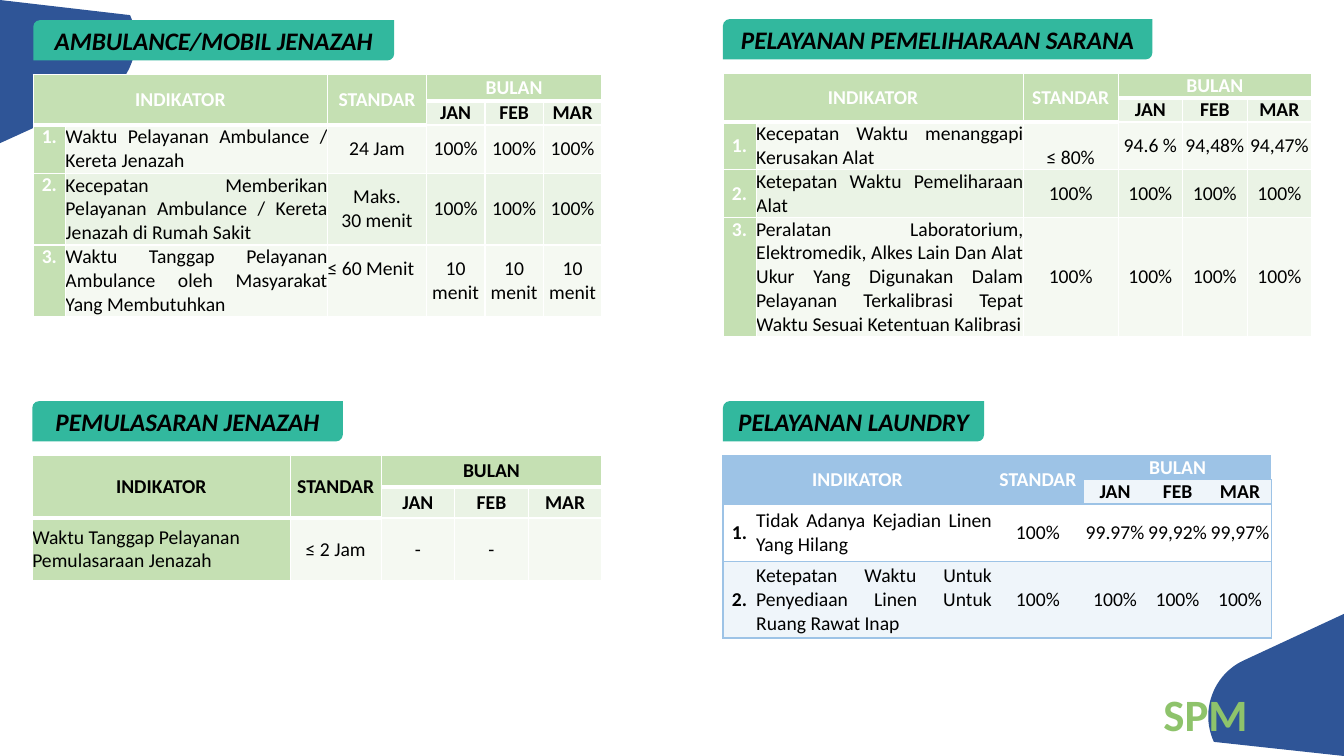
from collections import namedtuple

from lxml import etree
from pptx import Presentation
from pptx.dml.color import RGBColor
from pptx.enum import shapes, text
from pptx.oxml import ns
from pptx.util import Inches, Pt

NAVY = RGBColor(0x2F, 0x55, 0x97)
TEAL = RGBColor(0x32, 0xB8, 0x9E)
LEAF = RGBColor(0x8E, 0xC3, 0x6B)
GREEN = RGBColor(0xC5, 0xE0, 0xB3)
MINT = RGBColor(0xEA, 0xF3, 0xE5)
PALE = RGBColor(0xF5, 0xF9, 0xF2)
BLUE = RGBColor(0x9D, 0xC3, 0xE6)
ICE = RGBColor(0xEF, 0xF5, 0xFA)
WHITE = RGBColor(0xFF, 0xFF, 0xFF)
BLACK = RGBColor(0, 0, 0)

LEFT, MID, JUST = (text.PP_ALIGN.LEFT, text.PP_ALIGN.CENTER,
                   text.PP_ALIGN.JUSTIFY)
TOP, HALF, BASE = (text.MSO_ANCHOR.TOP, text.MSO_ANCHOR.MIDDLE,
                   text.MSO_ANCHOR.BOTTOM)
FONT = "Calibri"
GAP = 0.54  # from the top of a title tag to the top of its table

# head: header fill, ink: header text, band: even and odd rows,
# side: fill of the first column (None follows the row), num: its text
Look = namedtuple("Look", "head ink band side num grid")
FERN = Look(GREEN, WHITE, (PALE, MINT), GREEN, WHITE, True)
MOSS = FERN._replace(ink=BLACK, num=BLACK)
SKY = Look(BLUE, WHITE, (WHITE, ICE), None, BLACK, False)


def style(frame, size, color, bold=False, italic=False, align=MID):
    for para in frame.paragraphs:
        para.alignment = align
        font = para.font
        font.name, font.size, font.color.rgb = FONT, Pt(size), color
        font.bold, font.italic = bold, italic


def edge(cell, side, color, width):
    """Draw one border of a cell; no colour means no line."""
    props = cell._tc.get_or_add_tcPr()
    line = etree.SubElement(props, ns.qn("a:ln" + side), w=str(Pt(width)))
    if color is None:
        etree.SubElement(line, ns.qn("a:noFill"))
    else:
        fill = etree.SubElement(line, ns.qn("a:solidFill"))
        etree.SubElement(fill, ns.qn("a:srgbClr"), val=str(color))


def frame(cell, row, col, last, lead, look):
    """Set the four borders of a cell."""
    if look.grid:
        thick = row == 0 or (row == 1 and col <= lead)
        for side in "LRT":
            edge(cell, side, WHITE, 1)
        edge(cell, "B", WHITE, 3 if thick else 1)
    else:
        edge(cell, "L", BLUE if col == 0 else None, 1)
        edge(cell, "R", BLUE if col == last else None, 1)
        edge(cell, "T", BLUE, 1)
        edge(cell, "B", BLUE, 1)


def write(cell, words, color, bold=False, align=MID, anchor=HALF):
    cell.vertical_anchor = anchor
    cell.text = words
    style(cell.text_frame, 14, color, bold, align=align)


def tag(slide, x, y, w, words):
    """Title tag above a table."""
    box = slide.shapes.add_shape(
        shapes.MSO_SHAPE.ROUND_2_DIAG_RECTANGLE,
        Inches(x), Inches(y), Inches(w), Inches(0.4))
    box.shadow.inherit = False
    box.fill.solid()
    box.fill.fore_color.rgb = TEAL
    box.line.fill.background()
    box.text_frame.text = words
    box.text_frame.vertical_anchor = HALF
    style(box.text_frame, 18, BLACK, True, True)


def card(slide, x, y, wide, title, look, cols, rows, body, high=()):
    """Tag and table; rows listed in high have their number at the top."""
    tag(slide, x, y, wide, title)
    holder = slide.shapes.add_table(
        len(rows), len(cols), Inches(x), Inches(y + GAP),
        Inches(sum(cols)), Inches(sum(rows)))
    table = holder.table
    table.first_row = table.horz_banding = False
    for part, size in zip(table.columns, cols):
        part.width = Inches(size)
    for part, size in zip(table.rows, rows):
        part.height = Inches(size)
    last = len(cols) - 1
    lead = last - 3  # column of STANDAR

    # Borders and fills
    for r in range(len(rows)):
        for c in range(len(cols)):
            cell = table.cell(r, c)
            cell.margin_left = cell.margin_right = 0
            cell.margin_top = cell.margin_bottom = 0
            frame(cell, r, c, last, lead, look)
            color = look.band[r % 2]
            if r == 0 or (r == 1 and c <= lead):
                color = look.head
            elif r > 1 and c == 0 and look.side is not None:
                color = look.side
            cell.fill.solid()
            cell.fill.fore_color.rgb = color

    # Header
    table.cell(0, 0).merge(table.cell(1, lead - 1))
    table.cell(0, lead).merge(table.cell(1, lead))
    table.cell(0, lead + 1).merge(table.cell(0, last))
    for c, words in ((0, "INDIKATOR"), (lead, "STANDAR"), (lead + 1, "BULAN")):
        write(table.cell(0, c), words, look.ink, True)
    for c, words in enumerate(("JAN", "FEB", "MAR"), lead + 1):
        write(table.cell(1, c), words, BLACK, True)

    # Body
    for i, (name, *values) in enumerate(body):
        r = i + 2
        if lead == 2:
            anchor = TOP if i + 1 in high else HALF
            write(table.cell(r, 0), f"{i + 1}.", look.num, True, anchor=anchor)
        write(table.cell(r, lead - 1), name, BLACK,
              align=JUST if lead == 2 else LEFT)
        for c, words in enumerate(values, lead):
            write(table.cell(r, c), words, BLACK)
    return table


def corner(slide, start, knee, ctrl, end, tip):
    """Navy corner: a curve from knee to end, straight elsewhere."""
    marks = [knee]
    for k in range(1, 25):
        t = k / 24
        mix = ((1 - t) ** 3, 3 * t * (1 - t) ** 2, 3 * t * t * (1 - t), t ** 3)
        marks.append(tuple(sum(m * p[axis] for m, p in
                               zip(mix, (knee, *ctrl, end)))
                           for axis in (0, 1)))
    pen = slide.shapes.build_freeform(
        Inches(start[0]), Inches(start[1]), 1.0)
    pen.add_line_segments([(Inches(a), Inches(b)) for a, b in marks + tip])
    shape = pen.convert_to_shape()
    shape.shadow.inherit = False
    shape.fill.solid()
    shape.fill.fore_color.rgb = NAVY
    shape.line.fill.background()


def mark(slide, x, y, w, h):
    """Green word at the foot of the slide."""
    box = slide.shapes.add_textbox(Inches(x), Inches(y), Inches(w), Inches(h))
    box.text_frame.word_wrap = True
    box.text_frame.text = "SPM"
    style(box.text_frame, 32, LEAF, True, align=LEFT)


def main():
    deck = Presentation()
    deck.slide_width, deck.slide_height = Inches(13.33), Inches(7.5)
    slide = deck.slides.add_slide(deck.slide_layouts[6])

    # Corners
    corner(slide, (13.33, 7.5), (12.04, 7.36), ((11.9, 7.06), (12.03, 6.69)),
           (12.34, 6.55), [(13.33, 6.09)])
    corner(slide, (0, 0), (1.29, 0.15), ((1.43, 0.46), (1.29, 0.83)),
           (0.99, 0.97), [(0, 1.42)])

    # Four cards
    full = ["100%"] * 3
    van = card(
        slide, 0.33, 0.2, 3.58, "AMBULANCE/MOBIL JENAZAH", FERN,
        [0.32, 2.6, 0.98] + [0.58] * 3, [0.26, 0.24, 0.48, 0.71, 0.71],
        [("Waktu Pelayanan Ambulance / Kereta Jenazah", "24 Jam", *full),
         ("Kecepatan Memberikan Pelayanan Ambulance / Kereta Jenazah di "
          "Rumah Sakit", "Maks.\n30 menit", *full),
         ("Waktu Tanggap Pelayanan Ambulance oleh Masyarakat Yang "
          "Membutuhkan", "≤ 60 Menit", *["10 menit"] * 3)], (1, 2, 3))
    limit = van.cell(4, 2)
    limit.margin_bottom = Inches(0.24)
    limit.text_frame.paragraphs[0].alignment = LEFT

    care = card(
        slide, 7.17, 0.19, 4.26, "PELAYANAN PEMELIHARAAN SARANA", FERN,
        [0.33, 2.65, 0.94] + [0.64] * 3, [0.24, 0.24, 0.47, 0.47, 1.18],
        [("Kecepatan Waktu menanggapi Kerusakan Alat",
          "≤ 80%", "94.6 %", "94,48%", "94,47%"),
         ("Ketepatan Waktu Pemeliharaan Alat", "100%", *full),
         ("Peralatan Laboratorium, Elektromedik, Alkes Lain Dan Alat Ukur "
          "Yang Digunakan Dalam Pelayanan Terkalibrasi Tepat Waktu Sesuai "
          "Ketentuan Kalibrasi", "100%", *full)], (3,))
    care.cell(2, 2).vertical_anchor = BASE

    card(slide, 0.32, 3.98, 3.08, "PEMULASARAN JENAZAH", MOSS,
         [2.56, 0.9] + [0.73] * 3, [0.31, 0.31, 0.62],
         [("Waktu Tanggap Pelayanan Pemulasaraan Jenazah",
           "≤ 2 Jam", "-", "-")])

    card(slide, 7.17, 3.98, 2.59, "PELAYANAN LAUNDRY", SKY,
         [0.33, 2.34, 0.91] + [0.62] * 3, [0.24, 0.24, 0.57, 0.76],
         [("Tidak Adanya Kejadian Linen Yang Hilang",
           "100%", "99.97%", "99,92%", "99,97%"),
          ("Ketepatan Waktu Untuk Penyediaan Linen Untuk Ruang Rawat Inap",
           "100%", *full)])

    mark(slide, 11.44, 6.76, 1.18, 0.64)
    deck.save("out.pptx")


if __name__ == "__main__":
    main()
